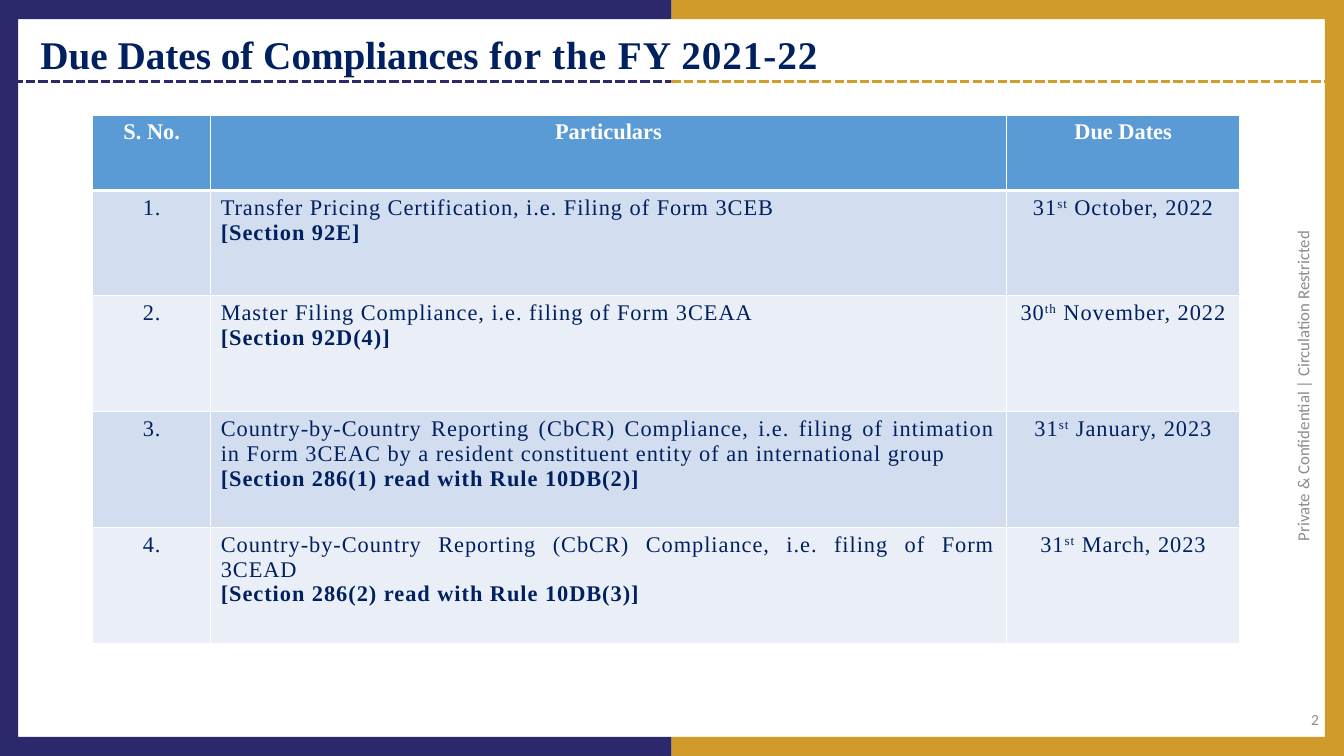
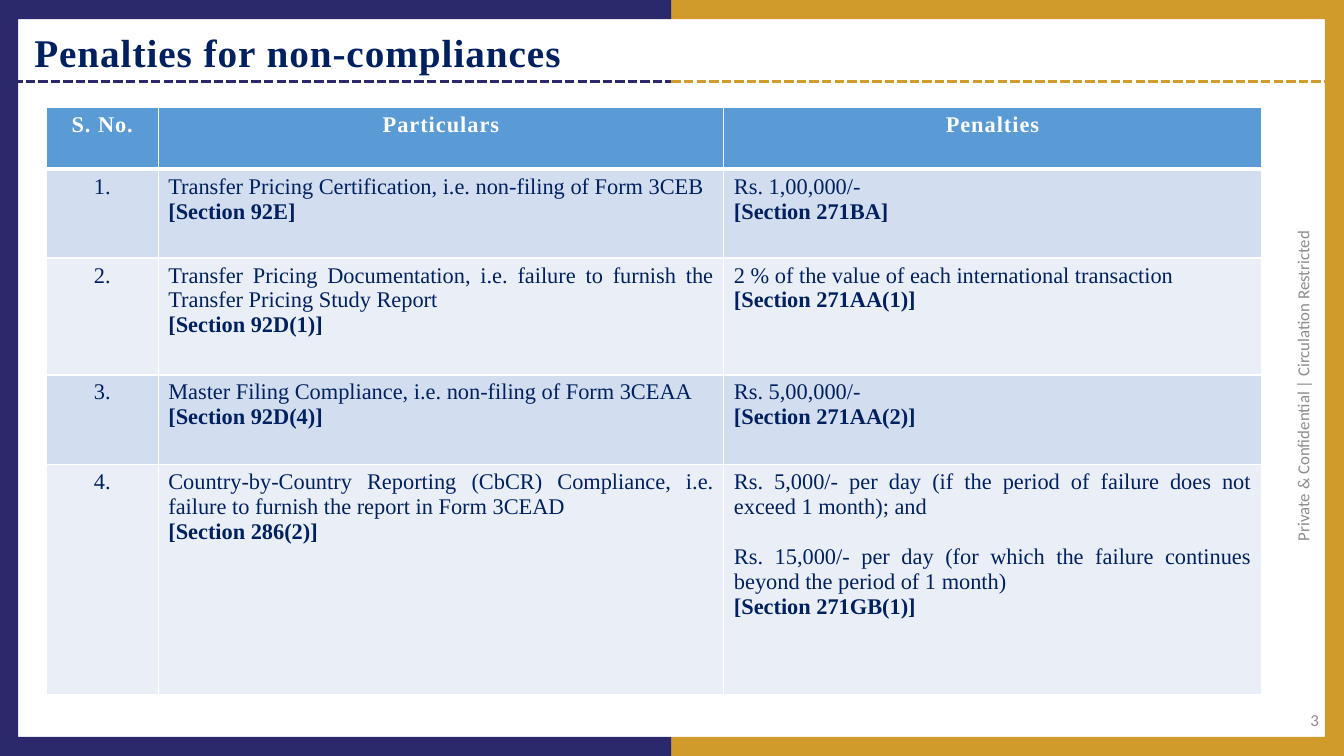
import pptx
import pptx.dml.color
import pptx.enum.dml
import pptx.enum.shapes
import pptx.enum.text
import pptx.oxml.ns
import pptx.util
from lxml import etree

PX = 9144  # EMU in one px, 100 px to the inch
WIDTH, HEIGHT, MIDDLE = 1333, 750, 666
RULE_Y = 81

INDIGO, GOLD, GOLD_RULE = "2C286C", "D09B2B", "D19C2C"
NAVY, GREY, WHITE = "002060", "8C8C8C", "FFFFFF"
HEADER_FILL, ROW_FILLS = "5B9BD5", ("D2DEEF", "EAEFF7")
SERIF, SANS = "Times New Roman", "Calibri"
SPACED = 70  # letter spacing, hundredths of a point

ALIGN = pptx.enum.text.PP_ALIGN
MSO_MIDDLE = pptx.enum.text.MSO_ANCHOR.MIDDLE

DUE_DATES = [
    ["S. No.", "Particulars", "Due Dates"],
    ["1.",
     "Transfer Pricing Certification, i.e. Filing of Form 3CEB\n[Section 92E]",
     "31^st^ October, 2022"],
    ["2.",
     "Master Filing Compliance, i.e. filing of Form 3CEAA\n[Section 92D(4)]",
     "30^th^ November, 2022"],
    ["3.",
     "Country-by-Country Reporting (CbCR) Compliance, i.e. filing of intimation in Form 3CEAC "
     "by a resident constituent entity of an international group\n"
     "[Section 286(1) read with Rule 10DB(2)]",
     "31^st^ January, 2023"],
    ["4.",
     "Country-by-Country Reporting (CbCR) Compliance, i.e. filing of Form 3CEAD\n"
     "[Section 286(2) read with Rule 10DB(3)]",
     "31^st^ March, 2023"],
]

PENALTIES = [
    ["S. No.", "Particulars", "Penalties"],
    ["1.",
     "Transfer Pricing Certification, i.e. non-filing of Form 3CEB\n[Section 92E]",
     "Rs. 1,00,000/-\n[Section 271BA]"],
    ["2.",
     "Transfer Pricing Documentation, i.e. failure to furnish the Transfer Pricing Study Report\n"
     "[Section 92D(1)]",
     "2 % of the value of each international transaction\n[Section 271AA(1)]"],
    ["3.",
     "Master Filing Compliance, i.e. non-filing of Form 3CEAA\n[Section 92D(4)]",
     "Rs. 5,00,000/-\n[Section 271AA(2)]"],
    ["4.",
     "Country-by-Country Reporting (CbCR) Compliance, i.e. failure to furnish the report "
     "in Form 3CEAD\n[Section 286(2)]",
     "Rs. 5,000/- per day (if the period of failure does not exceed 1 month); and\n\n"
     "Rs. 15,000/- per day (for which the failure continues beyond the period of 1 month)\n"
     "[Section 271GB(1)]"],
]


def px(n):
    return pptx.util.Emu(n * PX)


def rgb(color):
    return pptx.dml.color.RGBColor.from_string(color)


def fill(target, color):
    target.fill.solid()
    target.fill.fore_color.rgb = rgb(color)


def add_run(p, text, size, color, font=SERIF, bold=False, spacing=0):
    r = p.add_run()
    r.text = text
    r.font.name, r.font.size, r.font.bold = font, pptx.util.Pt(size), bold
    r.font.color.rgb = rgb(color)
    if spacing:
        r._r.get_or_add_rPr().set("spc", str(spacing))
    return r


def add_text_box(s, left, top, width, height, align):
    """Add a middle-anchored box and return it with its first paragraph."""
    sp = s.shapes.add_textbox(px(left), px(top), px(width), px(height))
    tf = sp.text_frame
    tf.word_wrap = True
    tf.vertical_anchor = MSO_MIDDLE
    p = tf.paragraphs[0]
    p.alignment = align
    return sp, p


# Frame shared by the slides
def add_bracket(s, outer, inner, color):
    """Half of the frame, open towards the middle of the slide."""
    points = [(MIDDLE, 0), (outer, 0), (outer, HEIGHT), (MIDDLE, HEIGHT),
              (MIDDLE, 731), (inner, 731), (inner, 19), (MIDDLE, 19)]
    builder = s.shapes.build_freeform(*points[0], scale=PX)
    builder.add_line_segments(points[1:], close=True)
    sp = builder.convert_to_shape()
    sp.shadow.inherit = False
    fill(sp, color)
    sp.line.fill.background()


def add_rule(s, x1, x2, color):
    line = s.shapes.add_connector(pptx.enum.shapes.MSO_CONNECTOR.STRAIGHT,
                                  px(x1), px(RULE_Y), px(x2), px(RULE_Y))
    line.line.color.rgb = rgb(color)
    line.line.width = pptx.util.Pt(2.25)
    line.line.dash_style = pptx.enum.dml.MSO_LINE.SQUARE_DOT
    etree.SubElement(line._element.spPr, pptx.oxml.ns.qn("a:effectLst"))


def add_framed_slide(prs, number, number_size):
    s = prs.slides.add_slide(prs.slide_layouts[6])
    add_bracket(s, WIDTH, 1314, GOLD)
    add_bracket(s, 0, 18, INDIGO)
    add_rule(s, MIDDLE, 1320, GOLD_RULE)
    add_rule(s, 13, MIDDLE, INDIGO)
    sp, p = add_text_box(s, 1067, 363, 450, 40, ALIGN.CENTER)
    sp.rotation = 270
    add_run(p, "Private & Confidential | Circulation Restricted", 12, GREY, SANS)
    sp, p = add_text_box(s, 1018, 694, 300, 40, ALIGN.RIGHT)
    add_run(p, str(number), number_size, GREY, SANS)
    return s


def add_title(s, left, top, height, runs):
    sp, p = add_text_box(s, left, top, 1170, height, ALIGN.LEFT)
    tf = sp.text_frame
    tf.margin_left = tf.margin_right = tf.margin_top = tf.margin_bottom = 0
    for text, spacing in runs:
        add_run(p, text, 28, NAVY, bold=True, spacing=spacing)


# Tables
def set_borders(cell, widths):
    tcPr = cell._tc.get_or_add_tcPr()
    qn = pptx.oxml.ns.qn
    for side, width in zip("LRTB", widths):
        ln = etree.SubElement(tcPr, qn(f"a:ln{side}"), w=str(pptx.util.Pt(width)))
        solid = etree.SubElement(ln, qn("a:solidFill"))
        etree.SubElement(solid, qn("a:srgbClr"), val=WHITE)


def write_cell(cell, text, align, color, header, spacing):
    """Blank lines become spacing, [..] lines are bold, ^..^ is superscript."""
    tf = cell.text_frame
    p = None
    for block in text.split("\n\n"):
        for i, line in enumerate(block.split("\n")):
            new_block = p is not None and i == 0
            p = tf.paragraphs[0] if p is None else tf.add_paragraph()
            p.alignment = align
            if new_block:
                p.space_before = pptx.util.Pt(18)
            bold = header or line.startswith("[")
            for k, part in enumerate(line.split("^")):
                r = add_run(p, part, 16, color, bold=bold, spacing=spacing)
                if k % 2:
                    r._r.get_or_add_rPr().set("baseline", "30000")


def add_grid(s, left, top, cols, heights, rows, last_align, header_spacing, body_spacing):
    frame = s.shapes.add_table(len(rows), len(cols), px(left), px(top),
                               px(sum(cols)), px(sum(heights)))
    table = frame.table
    for column, width in zip(table.columns, cols):
        column.width = px(width)
    for i, (height, texts) in enumerate(zip(heights, rows)):
        table.rows[i].height = px(height)
        header = i == 0
        aligns = [ALIGN.CENTER] * 3 if header else [ALIGN.CENTER, ALIGN.JUSTIFY, last_align]
        for j, (text, align) in enumerate(zip(texts, aligns)):
            cell = table.cell(i, j)
            set_borders(cell, (1, 1, 3 if i == 1 else 1, 3 if header else 1))
            fill(cell, HEADER_FILL if header else ROW_FILLS[(i - 1) % 2])
            write_cell(cell, text, align, WHITE if header else NAVY, header,
                       header_spacing if header else body_spacing)


def main():
    prs = pptx.Presentation()
    prs.slide_width, prs.slide_height = px(WIDTH), px(HEIGHT)

    # Due dates
    s = add_framed_slide(prs, 2, 11)
    add_title(s, 40, 28, 50, [("Due Dates of Compliances", 0), (" for the FY 2021-22", SPACED)])
    add_grid(s, 92, 114, [117, 789, 232], [75, 104, 115, 115, 115], DUE_DATES,
             ALIGN.CENTER, 0, SPACED)

    # Penalties
    s = add_framed_slide(prs, 3, 12)
    add_title(s, 34, 26, 50, [("Penalties for non-compliances", SPACED)])
    add_grid(s, 46, 107, [111, 561, 533], [61, 88, 116, 89, 228], PENALTIES,
             ALIGN.JUSTIFY, SPACED, 0)

    prs.save("out.pptx")


if __name__ == "__main__":
    main()
